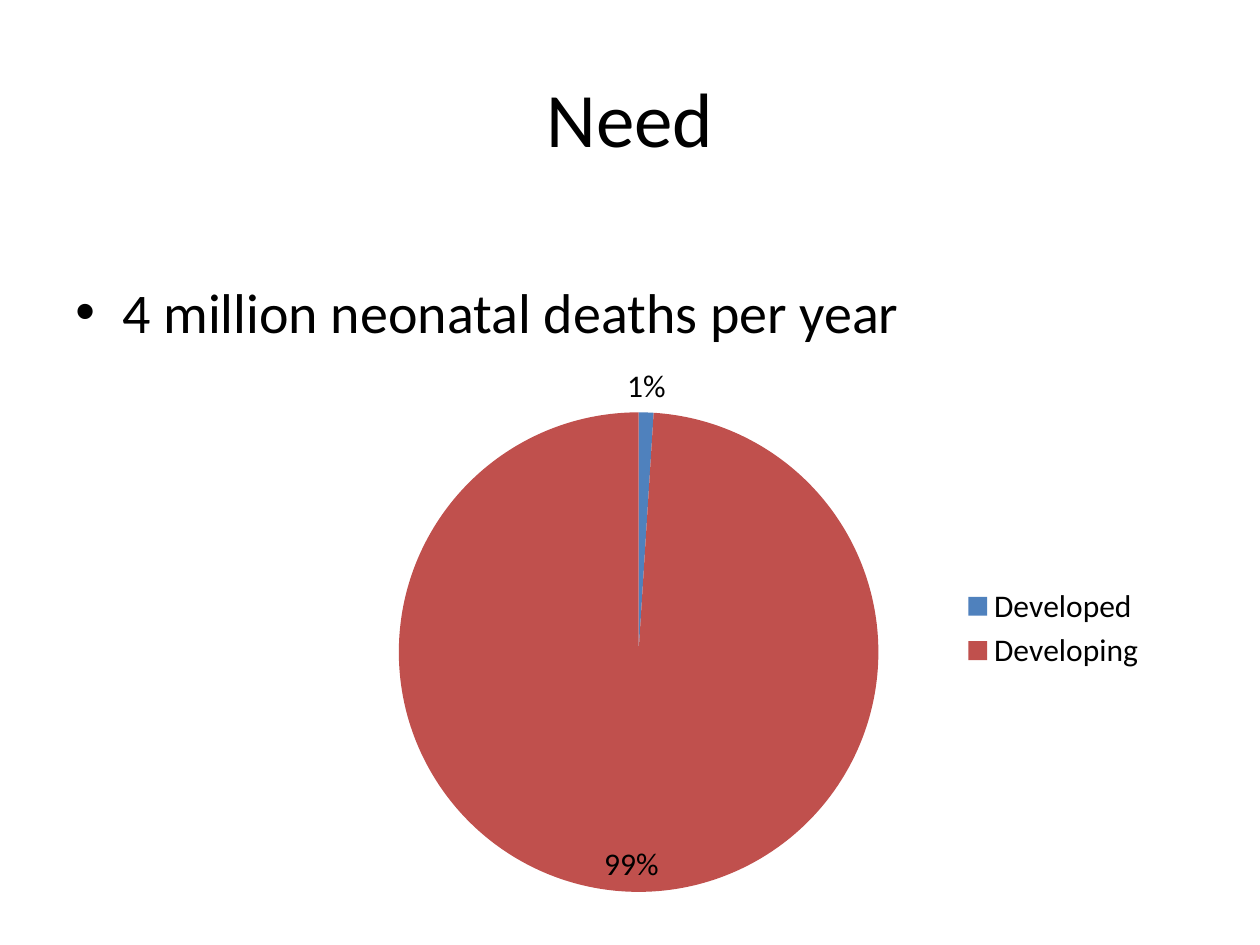
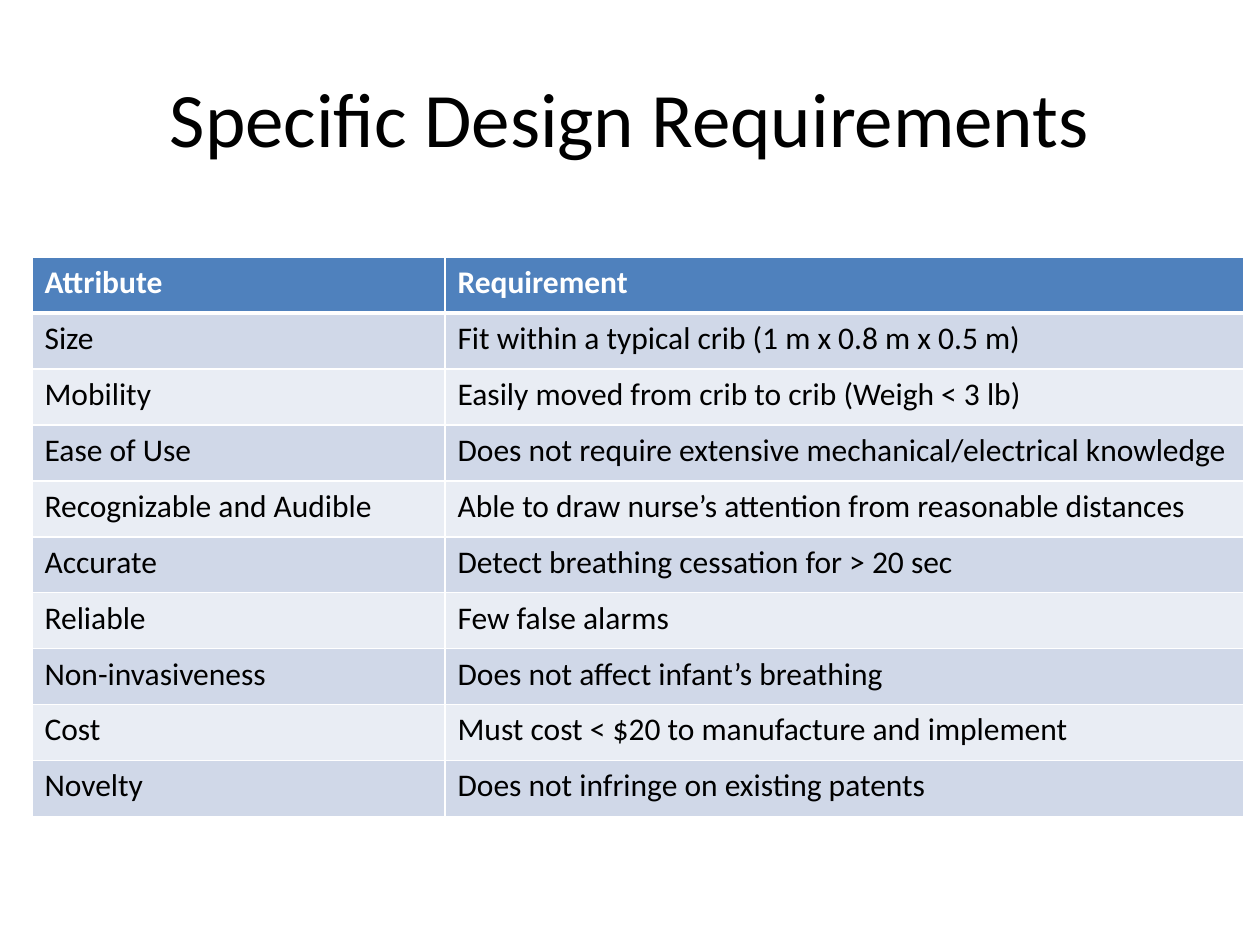
import lxml.etree
import pptx
import pptx.chart.data
import pptx.dml.color
import pptx.enum.chart
import pptx.enum.text
import pptx.oxml
import pptx.oxml.ns
import pptx.util

EMU_PER_PX = 914400 / 126
FONT = "Calibri"
BLACK, WHITE = "000000", "FFFFFF"
BLUE, RED = "4F81BD", "C0504D"
ROW_FILLS = ("D0D8E8", "E9EDF4")


def color(hex_string):
    return pptx.dml.color.RGBColor.from_string(hex_string)


def px(*lengths):
    """Turn pixel lengths into a list of EMU lengths."""
    return [pptx.util.Emu(round(length * EMU_PER_PX)) for length in lengths]


def write_text(text_frame, text, size=18, text_color=BLACK, bold=False,
               align=pptx.enum.text.PP_ALIGN.LEFT,
               anchor=pptx.enum.text.MSO_ANCHOR.TOP):
    text_frame.word_wrap = True
    text_frame.vertical_anchor = anchor
    paragraph = text_frame.paragraphs[0]
    paragraph.alignment = align
    run = paragraph.add_run()
    run.text = text
    run.font.name = FONT
    run.font.size = pptx.util.Pt(size)
    run.font.bold = bold
    run.font.color.rgb = color(text_color)
    return paragraph


presentation = pptx.Presentation()
presentation.slide_width, presentation.slide_height = px(1260, 945)

slides = []
for title in ("Need", "Specific Design Requirements"):
    slide = presentation.slides.add_slide(presentation.slide_layouts[6])
    title_box = slide.shapes.add_textbox(*px(63, 38, 1134, 157))
    write_text(title_box.text_frame, title, size=44,
               align=pptx.enum.text.PP_ALIGN.CENTER,
               anchor=pptx.enum.text.MSO_ANCHOR.MIDDLE)
    slides.append(slide)
need_slide, requirements_slide = slides

# Need: one bullet above a pie chart
bullet_box = need_slide.shapes.add_textbox(*px(63, 271, 1180, 80))
bullet = write_text(bullet_box.text_frame, "4 million neonatal deaths per year", size=32)
bullet_properties = bullet._p.get_or_add_pPr()
indent, = px(47)
bullet_properties.set("marL", str(indent))
bullet_properties.set("indent", str(-indent))
for tag, name, value in (("a:buFont", "typeface", "Arial"), ("a:buChar", "char", "•")):
    element = lxml.etree.SubElement(bullet_properties, pptx.oxml.ns.qn(tag))
    element.set(name, value)

chart_left, chart_top, chart_width, chart_height = 319, 349, 840, 559
pie_left, pie_top, pie_size = 399, 412, 480

chart_data = pptx.chart.data.CategoryChartData(number_format="0%")
chart_data.categories = ["Developed", "Developing"]
chart_data.add_series("Series 1", (0.01, 0.99))
chart = need_slide.shapes.add_chart(
    pptx.enum.chart.XL_CHART_TYPE.PIE,
    *px(chart_left, chart_top, chart_width, chart_height), chart_data).chart
chart.has_title = False
chart.font.name = FONT
chart.font.size = pptx.util.Pt(18)
chart.font.color.rgb = color(BLACK)
chart.has_legend = True
chart.legend.position = pptx.enum.chart.XL_LEGEND_POSITION.RIGHT
chart.legend.include_in_layout = False

pie = chart.plots[0]
pie.vary_by_categories = True
for index, fill_color in enumerate((BLUE, RED)):
    fill = pie.series[0].points[index].format.fill
    fill.solid()
    fill.fore_color.rgb = color(fill_color)
pie.has_data_labels = True
labels = pie.data_labels
labels.show_value = True
labels.show_percentage = False
labels.number_format = "0%"
labels.number_format_is_linked = False
labels.position = pptx.enum.chart.XL_LABEL_POSITION.BEST_FIT

plot_area = chart._chartSpace.chart.plotArea
for old_layout in plot_area.findall(pptx.oxml.ns.qn("c:layout")):
    plot_area.remove(old_layout)
plot_area.insert(0, pptx.oxml.parse_xml(
    f'<c:layout {pptx.oxml.ns.nsdecls("c")}><c:manualLayout>'
    '<c:layoutTarget val="inner"/><c:xMode val="edge"/><c:yMode val="edge"/>'
    f'<c:x val="{(pie_left - chart_left) / chart_width:.3f}"/>'
    f'<c:y val="{(pie_top - chart_top) / chart_height:.3f}"/>'
    f'<c:w val="{pie_size / chart_width:.3f}"/>'
    f'<c:h val="{pie_size / chart_height:.3f}"/>'
    '</c:manualLayout></c:layout>'))

# Specific Design Requirements: banded table
requirements = [
    ("Attribute", "Requirement"),
    ("Size", "Fit within a typical crib (1 m x 0.8 m x 0.5 m)"),
    ("Mobility", "Easily moved from crib to crib (Weigh < 3 lb)"),
    ("Ease of Use", "Does not require extensive mechanical/electrical knowledge"),
    ("Recognizable and Audible", "Able to draw nurse’s attention from reasonable distances"),
    ("Accurate", "Detect breathing cessation for > 20 sec"),
    ("Reliable", "Few false alarms"),
    ("Non-invasiveness", "Does not affect infant’s breathing"),
    ("Cost", "Must cost < $20 to manufacture and implement"),
    ("Novelty", "Does not infringe on existing patents"),
]
column_widths = px(413, 799)
row_height, = px(56)
table = requirements_slide.shapes.add_table(
    len(requirements), len(column_widths), *px(32, 257),
    sum(column_widths), row_height * len(requirements)).table
for column, width in zip(table.columns, column_widths):
    column.width = width

for row_index, row_texts in enumerate(requirements):
    table.rows[row_index].height = row_height
    is_header = row_index == 0
    for column_index, text in enumerate(row_texts):
        cell = table.cell(row_index, column_index)
        write_text(cell.text_frame, text, bold=is_header,
                   text_color=WHITE if is_header else BLACK)
        border_points = {
            "lnL": 1,
            "lnR": 1,
            "lnT": 3 if row_index == 1 else 1,
            "lnB": 3 if is_header else 1,
        }
        cell_properties = cell._tc.get_or_add_tcPr()
        for side, points in border_points.items():
            cell_properties.append(pptx.oxml.parse_xml(
                f'<a:{side} {pptx.oxml.ns.nsdecls("a")} w="{pptx.util.Pt(points)}">'
                f'<a:solidFill><a:srgbClr val="{WHITE}"/></a:solidFill></a:{side}>'))
        cell.fill.solid()
        cell.fill.fore_color.rgb = color(BLUE if is_header else ROW_FILLS[(row_index - 1) % 2])

presentation.save("out.pptx")
